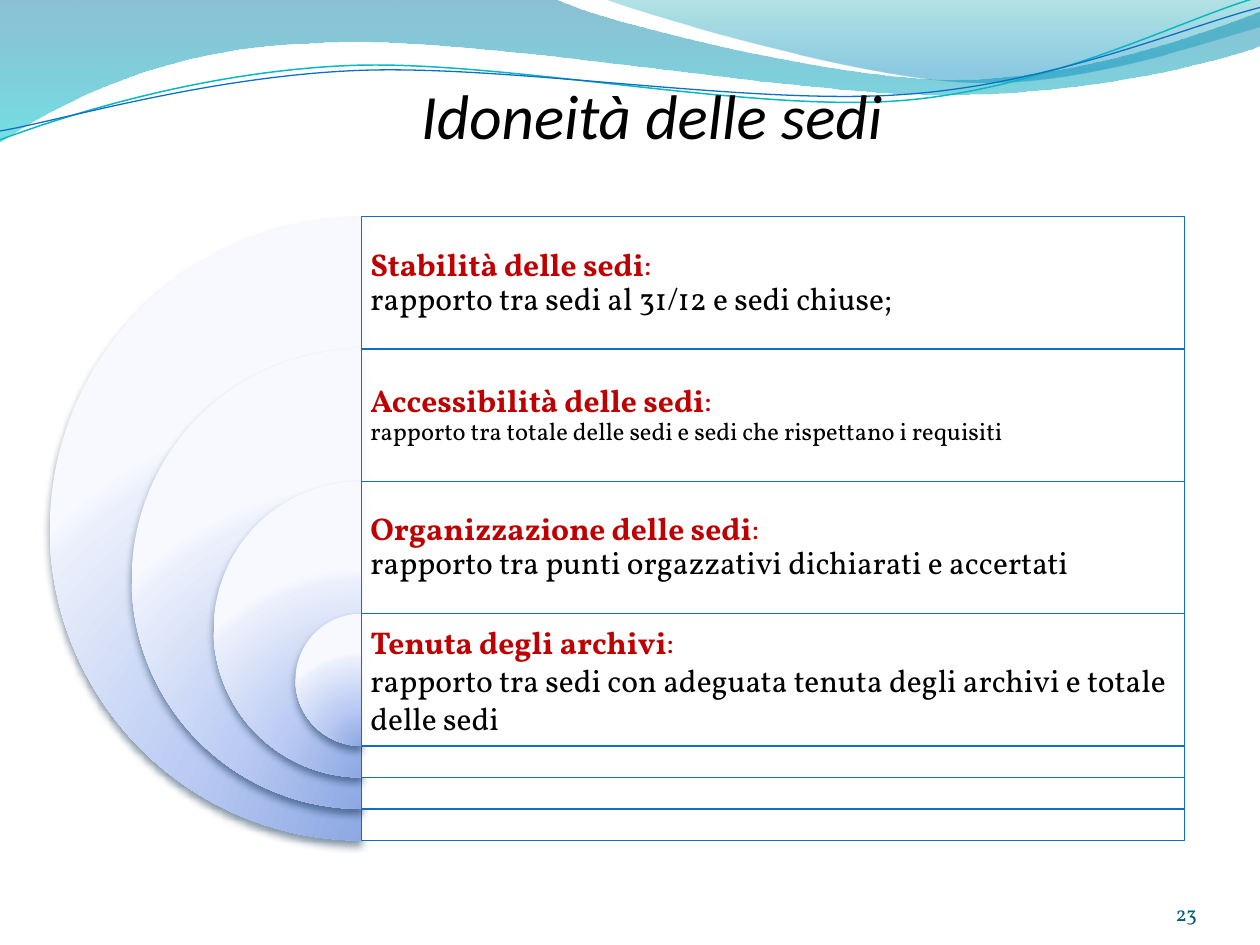
from dataclasses import dataclass
from math import cos, radians, sin

from lxml.etree import SubElement as Sub
from pptx import Presentation
from pptx.dml.color import RGBColor as Rgb
from pptx.enum.shapes import MSO_SHAPE as Kind
from pptx.enum.text import MSO_ANCHOR as Anchor, PP_ALIGN as Align
from pptx.oxml.ns import qn
from pptx.util import Inches as In, Pt


@dataclass(frozen=True)
class Theme:
    body: str = "Vollkorn"
    head: str = "Calibri"
    ink: str = "000000"
    red: str = "C00000"
    blue: str = "0F6FC6"
    teal: str = "0AB8BF"
    page: str = "045D75"
    white: str = "FFFFFF"
    shade: str = "042747"
    big: int = 36
    mid: int = 18
    low: int = 14
    tiny: int = 12
    disc: tuple = ((0, "8DA8E3", 100), (43, "BBCBF3", 100),
                   (93, "EAEFFB", 100), (100, "F7F9FF", 100))
    sea: tuple = ((0, "0074A1", 45), (100, "00C6CF", 55))
    sky: tuple = ((0, "00A1A9", 30), (80, "008BBF", 45))


T = Theme()
WIDE, HIGH = 10, 7.5
LEFT, TOP, SPAN = 2.87, 1.72, 6.53
ROW, SIZE, DROP = 1.05, 4.95, 1.3
TILT = -2.7

SEA = [(0, 0), (4.4, -0.01),
       (4.76, 0.17, 6.64, 0.63, 7.58, 0.63), (8.53, 0.63, 9.58, 0.26, 10, 0.09),
       (10.01, 0.36),
       (9.83, 0.44, 8.7, 0.76, 7.46, 0.75), (6.22, 0.75, 3.82, 0.28, 2.57, 0.34),
       (1.29, 0.36, 0.46, 0.83, -0.01, 1.13)]
SKY = [(4.79, -0.01),
       (5.09, 0.11, 6.82, 0.62, 7.69, 0.65), (8.56, 0.69, 9.61, 0.32, 10, 0.21),
       (10, 0)]
CREST = [(0, 1.11),
         (0.48, 0.93, 1.58, 0.57, 2.77, 0.52), (3.95, 0.47, 5.93, 0.89, 7.13, 0.8),
         (8.33, 0.71, 9.38, 0.15, 9.98, -0.02)]
SWELL = [(0, 1.04),
         (0.47, 0.96, 1.64, 0.61, 2.83, 0.56), (4.03, 0.51, 5.97, 0.84, 7.17, 0.75),
         (8.36, 0.67, 9.41, 0.21, 10, 0.06)]

ITEMS = [
    ("Stabilità delle sedi", "rapporto tra sedi al 31/12 e sedi chiuse;", T.mid, 0.9),
    ("Accessibilità delle sedi",
     "rapporto tra totale delle sedi e sedi che rispettano i requisiti", T.low, 0.9),
    ("Organizzazione delle sedi",
     "rapporto tra punti orgazzativi dichiarati e accertati", T.mid, 0.9),
    ("Tenuta degli archivi",
     "rapporto tra sedi con adeguata tenuta degli archivi e totale delle sedi",
     T.mid, 1.0),
]


def tint(node, color, alpha):
    clr = Sub(node, qn("a:srgbClr"), val=color)
    if alpha < 100:
        Sub(clr, qn("a:alpha"), val=str(alpha * 1000))


def blend(shape, stops, focal=False):
    shape.fill.background()
    grad = shape._element.spPr.find(qn("a:noFill"))
    grad.tag = qn("a:gradFill")
    grad.set("rotWithShape", "1")
    row = Sub(grad, qn("a:gsLst"))
    for pos, color, alpha in stops:
        tint(Sub(row, qn("a:gs"), pos=str(pos * 1000)), color, alpha)
    if focal:
        way = Sub(grad, qn("a:path"), {"path": "circle"})
        Sub(way, qn("a:fillToRect"), l="50000", t="130000", r="50000", b="-30000")
    else:
        Sub(grad, qn("a:lin"), ang="5400000", scaled="1")


def spin(point, hub, angle):
    dx, dy = point[0] - hub[0], point[1] - hub[1]
    c, s = cos(radians(angle)), sin(radians(angle))
    return hub[0] + dx * c - dy * s, hub[1] + dx * s + dy * c


def bend(shape, legs):
    lines = list(shape._element.spPr.iter(qn("a:lnTo")))
    for leg in legs[1:]:
        head, *tail = lines[:len(leg) // 2]
        lines = lines[len(leg) // 2:]
        if tail:
            head.tag = qn("a:cubicBezTo")
            for node in tail:
                head.append(node[0])
                node.getparent().remove(node)


def wave(slide, legs, stops=None, color=None, width=0.75, hub=(0, 0), turn=0):
    pts = [leg[i:i + 2] for leg in legs for i in range(0, len(leg), 2)]
    first, *rest = [tuple(map(In, spin(p, hub, -turn))) for p in pts]
    pen = slide.shapes.build_freeform(*first)
    pen.add_line_segments(rest, close=bool(stops))
    shape = pen.convert_to_shape()
    bend(shape, legs)
    shape.rotation = turn
    shape.shadow.inherit = False
    if stops:
        blend(shape, stops)
        shape.line.fill.background()
    else:
        shape.fill.background()
        shape.line.color.rgb = Rgb.from_string(color)
        shape.line.width = Pt(width)


def disc(slide, x, y, size):
    pie = slide.shapes.add_shape(Kind.PIE, In(x), In(y), In(size), In(size))
    pie.adjustments[0], pie.adjustments[1] = 54, 162
    blend(pie, T.disc, focal=True)
    pie.line.fill.background()
    pie.shadow.inherit = False
    glow = Sub(pie._element.spPr.find(qn("a:effectLst")), qn("a:outerShdw"),
               blurRad=str(Pt(4.5)), dist=str(Pt(3)), dir="5400000", rotWithShape="0")
    tint(glow, T.shade, 48)


def panel(slide, x, y, wide, high):
    box = slide.shapes.add_shape(Kind.RECTANGLE, In(x), In(y), In(wide), In(high))
    box.shadow.inherit = False
    box.fill.solid()
    box.fill.fore_color.rgb = Rgb.from_string(T.white)
    clr = box._element.spPr.find(qn("a:solidFill"))[0]
    Sub(clr, qn("a:alpha"), val="90000")
    box.line.color.rgb = Rgb.from_string(T.blue)
    box.line.width = Pt(0.75)


def run(text, size=T.mid, color=T.ink, font=T.body, bold=False, slant=False):
    return text, size, color, font, bold, slant


def write(slide, area, lines, align=Align.LEFT, anchor=Anchor.MIDDLE,
          pad=(0, 0, 0, 0), gap=1.0):
    frame = slide.shapes.add_textbox(*map(In, area)).text_frame
    frame.word_wrap = True
    frame.vertical_anchor = anchor
    (frame.margin_left, frame.margin_top,
     frame.margin_right, frame.margin_bottom) = map(In, pad)
    for i, line in enumerate(lines):
        para = frame.add_paragraph() if i else frame.paragraphs[0]
        para.alignment, para.line_spacing = align, gap
        for text, size, color, font, bold, slant in line:
            part = para.add_run()
            part.text = text
            face = part.font
            face.size, face.name = Pt(size), font
            face.bold, face.italic = bold, slant
            face.color.rgb = Rgb.from_string(color)


def main():
    deck = Presentation()
    deck.slide_width, deck.slide_height = In(WIDE), In(HIGH)
    slide = deck.slides.add_slide(deck.slide_layouts[6])

    wave(slide, SEA, stops=T.sea)
    wave(slide, SKY, stops=T.sky)
    wave(slide, CREST, color=T.teal, width=0.85, hub=(4.99, 0.57), turn=TILT)
    wave(slide, SWELL, color=T.blue, hub=(5, 0.59), turn=TILT)
    write(slide, (0.91, 0.36, 8.43, 0.87),
          [[run("Idoneità delle sedi", T.big, font=T.head, slant=True)]],
          align=Align.CENTER, anchor=Anchor.BOTTOM, pad=(0.1, 0.05, 0, 0.02))

    for i, (name, note, size, gap) in enumerate(ITEMS):
        y, high = TOP + i * ROW, SIZE - i * DROP
        disc(slide, LEFT - high / 2, y, high)
        panel(slide, LEFT, y, SPAN, high)
        write(slide, (LEFT, y, SPAN, ROW),
              [[run(name, color=T.red, bold=True), run(":", color=T.red)],
               [run(note, size)]], pad=(0.07,) * 4, gap=gap)

    write(slide, (8.67, 6.95, 0.83, 0.4), [[run("23", T.tiny, T.page)]],
          align=Align.RIGHT, anchor=Anchor.BOTTOM)
    deck.save("out.pptx")


if __name__ == "__main__":
    main()
